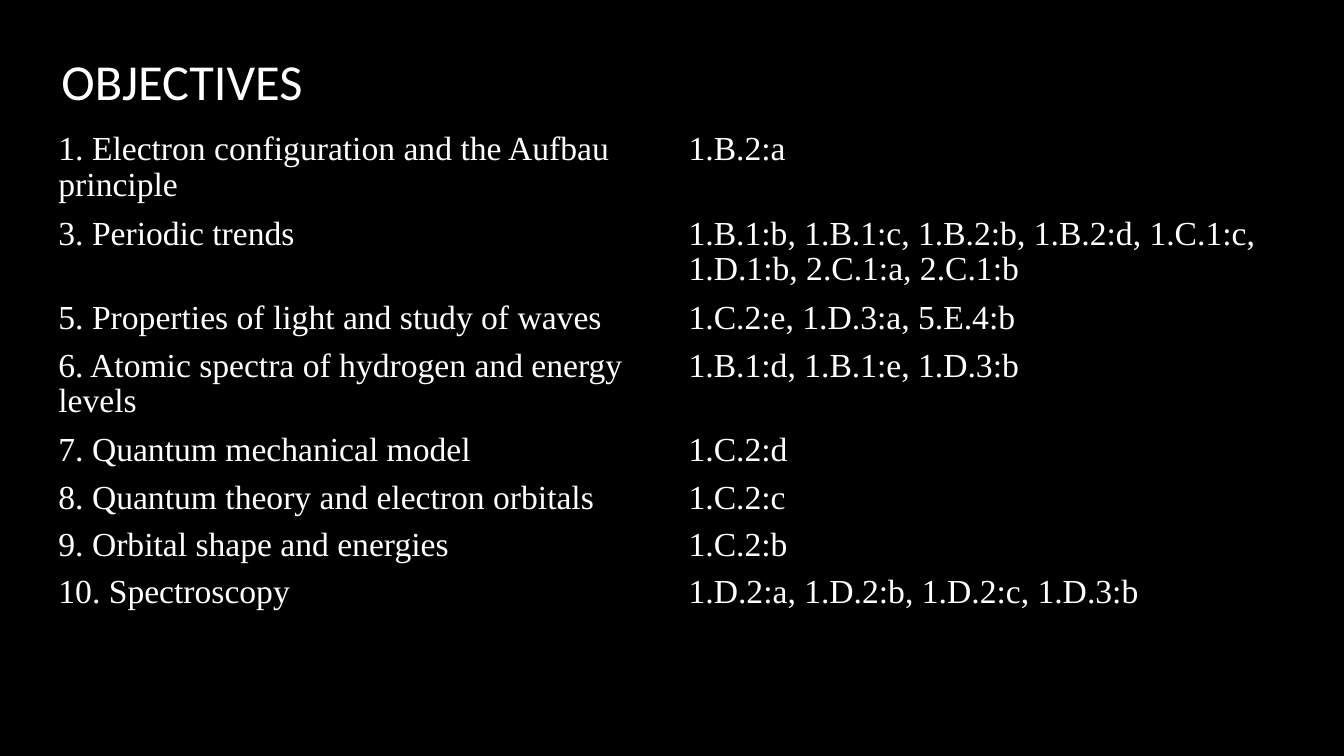
from pptx import Presentation
from pptx.dml.color import RGBColor
from pptx.enum.text import MSO_ANCHOR, PP_ALIGN
from pptx.oxml.ns import qn
from pptx.util import Inches, Pt

COLORS = {"background": "000000", "text": "FFFFFF"}
NO_STYLE_NO_GRID = "{2D5ABB26-0587-4C30-8999-92F81FD0307C}"
ONE_LINE, TWO_LINES = 0.47, 0.84

# Objective, standards, row height
OBJECTIVES = [
    ("1. Electron configuration and the Aufbau principle", "1.B.2:a", TWO_LINES),
    ("3. Periodic trends",
     "1.B.1:b, 1.B.1:c, 1.B.2:b, 1.B.2:d, 1.C.1:c, 1.D.1:b, 2.C.1:a, 2.C.1:b",
     TWO_LINES),
    ("5. Properties of light and study of waves", "1.C.2:e, 1.D.3:a, 5.E.4:b", ONE_LINE),
    ("6. Atomic spectra of hydrogen and energy levels",
     "1.B.1:d, 1.B.1:e, 1.D.3:b", TWO_LINES),
    ("7. Quantum mechanical model", "1.C.2:d", ONE_LINE),
    ("8. Quantum theory and electron orbitals", "1.C.2:c", ONE_LINE),
    ("9. Orbital shape and energies", "1.C.2:b", ONE_LINE),
    ("10. Spectroscopy", "1.D.2:a, 1.D.2:b, 1.D.2:c, 1.D.3:b", ONE_LINE),
]


def format_text(paragraph, font_name, size):
    paragraph.alignment = PP_ALIGN.LEFT
    for run in paragraph.runs:
        run.font.name = font_name
        run.font.size = Pt(size)
        run.font.color.rgb = RGBColor.from_string(COLORS["text"])


prs = Presentation()
prs.slide_width, prs.slide_height = Inches(13.33), Inches(7.5)
slide = prs.slides.add_slide(prs.slide_layouts[5])
slide.background.fill.solid()
slide.background.fill.fore_color.rgb = RGBColor.from_string(COLORS["background"])

# Title
title = slide.shapes.title
title.left, title.top = Inches(0.51), Inches(0)
title.width, title.height = Inches(11.08), Inches(1.59)
title.text_frame.text = "OBJECTIVES"
title.text_frame.vertical_anchor = MSO_ANCHOR.MIDDLE
format_text(title.text_frame.paragraphs[0], "Calibri", 36)

# Objectives and their standards, without grid or banding
table_height = sum(height for _, _, height in OBJECTIVES)
objectives = slide.shapes.add_table(
    len(OBJECTIVES), 2, Inches(0.51), Inches(1.26), Inches(12.03), Inches(table_height)
).table
objectives.first_row = objectives.horz_banding = False
objectives._tbl.tblPr.find(qn("a:tableStyleId")).text = NO_STYLE_NO_GRID
objectives.columns[0].width = Inches(6.25)
objectives.columns[1].width = Inches(5.78)

for row, (objective, standards, height) in enumerate(OBJECTIVES):
    objectives.rows[row].height = Inches(height)
    for column, wording in enumerate((objective, standards)):
        cell = objectives.cell(row, column)
        cell.fill.background()
        cell.margin_left = cell.margin_right = Inches(0.07)
        cell.margin_top = cell.margin_bottom = Inches(0.05)
        cell.text_frame.text = wording
        paragraph = cell.text_frame.paragraphs[0]
        paragraph.line_spacing = 0.96
        format_text(paragraph, "Times New Roman", 24)

prs.save("out.pptx")
